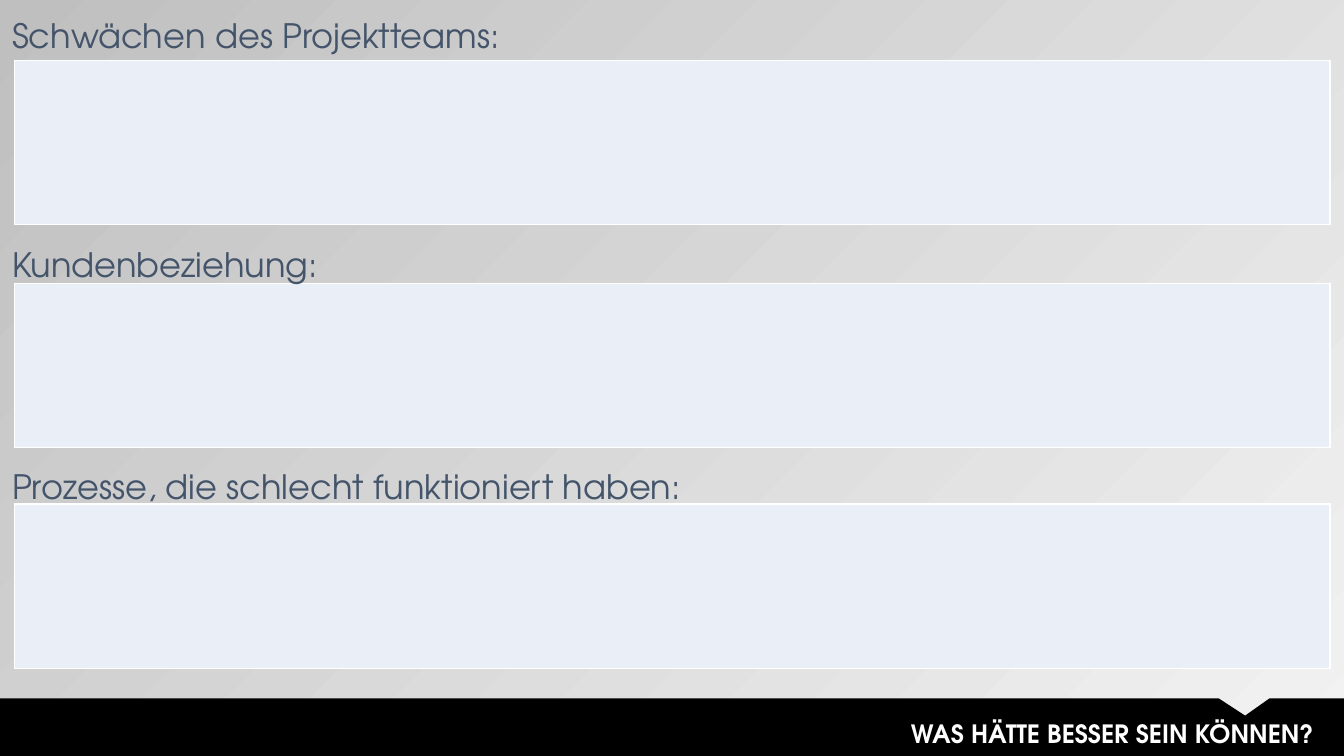
from lxml.etree import SubElement
from pptx import Presentation
from pptx.dml.color import RGBColor
from pptx.enum.text import MSO_ANCHOR as ANCHOR, MSO_AUTO_SIZE as AUTO, PP_ALIGN as ALIGN
from pptx.oxml.ns import qn
from pptx.util import Pt

PX = 9144
FONT = "TeX Gyre Adventor"
COLORS = {"light": "F2F2F2", "grey": "BFBFBF", "bar": "000000",
          "white": "FFFFFF", "field": "EAEFF7", "label": "44546A"}
SECTIONS = [
    ("Schwächen des Projektteams:", (0, 19, 763, 44), 60, Pt(21.5)),
    ("Kundenbeziehung:", (0, 228, 763, 57), 281, 1.2),
    ("Prozesse, die schlecht funktioniert haben:", (0, 448, 763, 57), 500, 1.2),
]


def px(*values):
    return [v * PX for v in values]


def rgb(name):
    return RGBColor.from_string(COLORS[name])


def add_run(p, text, size, color, bold=False):
    r = p.add_run()
    r.text = text
    r.font.name = FONT
    r.font.size = Pt(size)
    r.font.bold = bold
    r.font.color.rgb = rgb(color)


def paint_background(s):
    fill = s.background.fill
    fill.gradient()
    fill.gradient_angle = 135
    for stop, color in zip(fill.gradient_stops, ("light", "grey")):
        stop.color.rgb = rgb(color)


def add_label(s, text, box, spacing):
    tf = s.shapes.add_textbox(*px(*box)).text_frame
    tf.word_wrap = True
    tf.auto_size = AUTO.SHAPE_TO_FIT_TEXT
    tf.margin_left = tf.margin_right = 12 * PX
    tf.margin_top = tf.margin_bottom = 6 * PX
    p = tf.paragraphs[0]
    p.line_spacing = spacing
    p.space_before = Pt(5)
    add_run(p, text, 24, "label")


def add_field(s, box):
    table = s.shapes.add_table(1, 1, *px(*box)).table
    table.first_row = table.horz_banding = False
    cell = table.cell(0, 0)
    tcPr = cell._tc.get_or_add_tcPr()
    for side in ("a:lnL", "a:lnR", "a:lnT", "a:lnB"):
        ln = SubElement(tcPr, qn(side), w=str(Pt(1)))
        solid = SubElement(ln, qn("a:solidFill"))
        SubElement(solid, qn("a:srgbClr"), val=COLORS["white"])
    cell.fill.solid()
    cell.fill.fore_color.rgb = rgb("field")


def add_footer(s, box):
    x, y, w, h = box
    notch = [(1209, 0), (1235, 17), (1259, 0), (w, 0), (w, h), (0, h)]
    builder = s.shapes.build_freeform(x, y, scale=PX)
    builder.add_line_segments([(x + dx, y + dy) for dx, dy in notch])
    sp = builder.convert_to_shape()
    sp.shadow.inherit = False
    sp.fill.solid()
    sp.fill.fore_color.rgb = rgb("bar")
    sp.line.fill.background()

    title = s.shapes.title
    title.left, title.top, title.width, title.height = px(x + 414, y + 15, 906, 40)
    s.shapes._spTree.append(title._element)
    tf = title.text_frame
    tf.word_wrap = True
    tf.auto_size = AUTO.SHAPE_TO_FIT_TEXT
    tf.vertical_anchor = ANCHOR.TOP
    p = tf.paragraphs[0]
    p.alignment = ALIGN.RIGHT
    add_run(p, "WAS HÄTTE BESSER SEIN KÖNNEN? ", 18, "white", True)


def main():
    prs = Presentation()
    prs.slide_width, prs.slide_height = px(1333, 750)
    s = prs.slides.add_slide(prs.slide_layouts[5])
    paint_background(s)
    add_footer(s, (0, 693, 1333, 57))
    for text, box, top, spacing in SECTIONS:
        add_field(s, (14, top, 1305, 163))
        add_label(s, text, box, spacing)
    prs.save("out.pptx")


if __name__ == "__main__":
    main()
